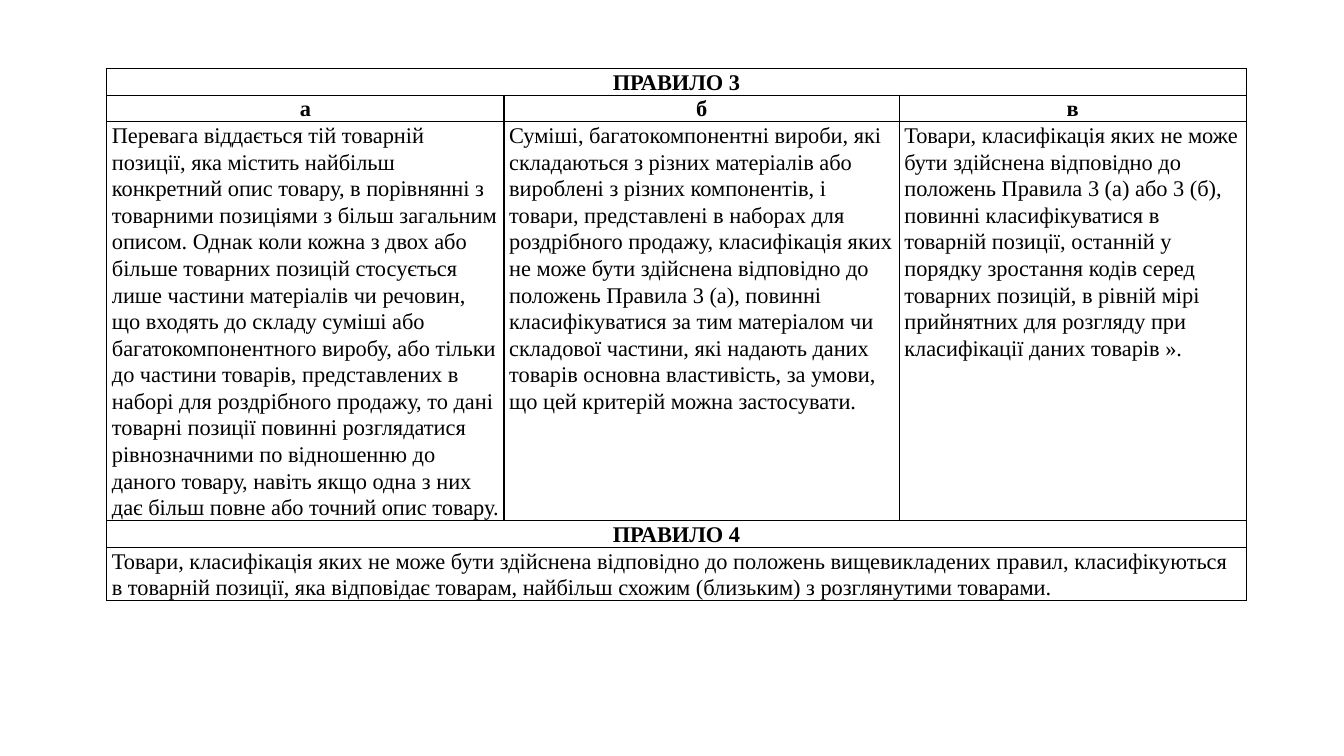
from pptx import Presentation
from pptx.dml import color
from pptx.enum import text
from pptx.oxml import ns
from pptx.util import Inches, Pt
from lxml import etree


def rgb(value):
    return color.RGBColor.from_string(value)


def write(cell, content, bold=False, align=text.PP_ALIGN.LEFT):
    p = cell.text_frame.paragraphs[0]
    p.alignment = align
    p.line_spacing = 1.07
    r = p.add_run()
    r.text = content
    r.font.name = "Times New Roman"
    r.font.size = Pt(16)
    r.font.bold = bold
    r.font.color.rgb = rgb("000000")


prs = Presentation()
prs.slide_width, prs.slide_height = Inches(13.33), Inches(7.5)
s = prs.slides.add_slide(prs.slide_layouts[6])

widths = [3.94, 3.92, 3.44]
heights = [0.26, 0.26, 3.95, 0.26, 0.53]
rows = [
    ["ПРАВИЛО 3"],
    ["а", "б", "в"],
    [
        "Перевага віддається тій товарній позиції, яка містить найбільш конкретний опис товару, "
        "в порівнянні з товарними позиціями з більш загальним описом. Однак коли кожна з двох або "
        "більше товарних позицій стосується лише частини матеріалів чи речовин, що входять до складу "
        "суміші або багатокомпонентного виробу, або тільки до частини товарів, представлених в наборі "
        "для роздрібного продажу, то дані товарні позиції повинні розглядатися рівнозначними по "
        "відношенню до даного товару, навіть якщо одна з них дає більш повне або точний опис товару.",
        "Суміші, багатокомпонентні вироби, які складаються з різних матеріалів або вироблені з різних "
        "компонентів, і товари, представлені в наборах для роздрібного продажу, класифікація яких не "
        "може бути здійснена відповідно до положень Правила 3 (а), повинні класифікуватися за тим "
        "матеріалом чи складової частини, які надають даних товарів основна властивість, за умови, "
        "що цей критерій можна застосувати.",
        "Товари, класифікація яких не може бути здійснена відповідно до положень Правила 3 (а) або "
        "3 (б), повинні класифікуватися в товарній позиції, останній у порядку зростання кодів серед "
        "товарних позицій, в рівній мірі прийнятних для розгляду при класифікації даних товарів ».",
    ],
    ["ПРАВИЛО 4"],
    [
        "Товари, класифікація яких не може бути здійснена відповідно до положень вищевикладених "
        "правил, класифікуються в товарній позиції, яка відповідає товарам, найбільш схожим "
        "(близьким) з розглянутими товарами."
    ],
]
heading_rows = (0, 1, 3)

table = s.shapes.add_table(
    len(rows), len(widths), Inches(1.06), Inches(0.68), Inches(sum(widths)), Inches(sum(heights))
).table
table.first_row = table.horz_banding = False
for column, width in zip(table.columns, widths):
    column.width = Inches(width)
for row, height in zip(table.rows, heights):
    row.height = Inches(height)

for cell in table.iter_cells():
    cell.margin_left = cell.margin_right = Inches(0.05)
    cell.margin_top = cell.margin_bottom = 0
    tcPr = cell._tc.get_or_add_tcPr()
    for side in ("lnL", "lnR", "lnT", "lnB"):
        ln = etree.SubElement(tcPr, ns.qn(f"a:{side}"), w=str(Pt(1)))
        fill = etree.SubElement(ln, ns.qn("a:solidFill"))
        etree.SubElement(fill, ns.qn("a:srgbClr"), val="000000")
    cell.fill.background()

for i, contents in enumerate(rows):
    if len(contents) == 1:
        table.cell(i, 0).merge(table.cell(i, len(widths) - 1))
    for j, content in enumerate(contents):
        if i in heading_rows:
            write(table.cell(i, j), content, bold=True, align=text.PP_ALIGN.CENTER)
        else:
            write(table.cell(i, j), content)

prs.save("out.pptx")
